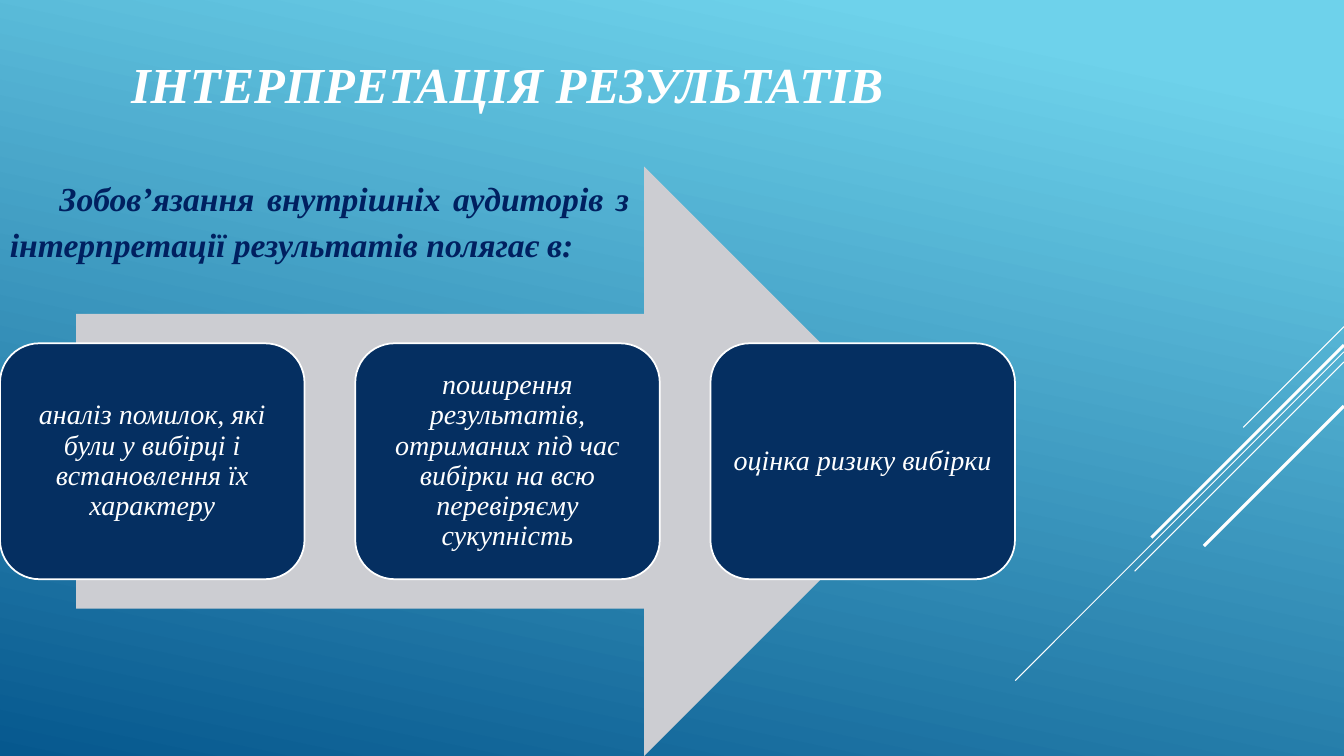
"""Build the slide on interpreting audit sampling results."""
from lxml import etree
from pptx import Presentation
from pptx.dml.color import RGBColor
from pptx.enum.shapes import MSO_CONNECTOR, MSO_SHAPE
from pptx.enum.text import MSO_ANCHOR, MSO_AUTO_SIZE, PP_ALIGN
from pptx.oxml.ns import qn
from pptx.util import Pt

STRAIGHT = MSO_CONNECTOR.STRAIGHT
ARROW, ROUNDED = MSO_SHAPE.RIGHT_ARROW, MSO_SHAPE.ROUNDED_RECTANGLE
MIDDLE, NO_FIT = MSO_ANCHOR.MIDDLE, MSO_AUTO_SIZE.NONE
CENTER, JUSTIFY = PP_ALIGN.CENTER, PP_ALIGN.JUSTIFY

TITLE = "ІНТЕРПРЕТАЦІЯ РЕЗУЛЬТАТІВ"
INTRO = "Зобов’язання внутрішніх аудиторів з інтерпретації результатів полягає в:"
STEPS = [
    "аналіз помилок, які були у вибірці і встановлення їх характеру",
    "поширення результатів, отриманих під час вибірки на всю перевіряєму сукупність",
    "оцінка ризику вибірки",
]
COLORS = {"sky": "6ED2EB", "deep": "06588E", "white": "FFFFFF",
          "arrow": "CCCDD2", "step": "052F61", "intro": "002060"}
FONT = "Times New Roman"
PAGE_WIDTH, PAGE_HEIGHT = 960, 540
FLOW_WIDTH, HEADER_HEIGHT = 725, 119
STEP_WIDTH, STEP_HEIGHT = 217.5, 168.5
STEP_GAP = (FLOW_WIDTH - len(STEPS) * STEP_WIDTH) / (len(STEPS) - 1)
ARROW_LEFT, ARROW_WIDTH = 54.4, 616.25
ARROW_HEIGHT = PAGE_HEIGHT - HEADER_HEIGHT
STEP_TOP = HEADER_HEIGHT + (ARROW_HEIGHT - STEP_HEIGHT) / 2
DIAGONALS = [(233.3, 72, 0.75), (251.3, 234.8, 0.75), (258.5, 149.5, 0.75),
             (246.5, 137.5, 2.25), (290, 100, 2.25)]


def color(name):
    return RGBColor.from_string(COLORS[name])


def write(box, text, size, tint, align, bold=False):
    frame = box.text_frame
    frame.word_wrap = True
    frame.auto_size = NO_FIT
    frame.text = text
    para = frame.paragraphs[0]
    para.alignment = align
    font = para.runs[0].font
    font.name, font.size = FONT, Pt(size)
    font.bold, font.italic = bold, True
    font.color.rgb = color(tint)
    return para


def add_block(page, kind, left, top, width, height, tint):
    block = page.shapes.add_shape(kind, Pt(left), Pt(top), Pt(width), Pt(height))
    block.shadow.inherit = False
    block.fill.solid()
    block.fill.fore_color.rgb = color(tint)
    block.line.fill.background()
    return block


def add_diagonal(page, top, run, weight):
    line = page.shapes.add_connector(
        STRAIGHT, Pt(PAGE_WIDTH), Pt(top), Pt(PAGE_WIDTH - run), Pt(top + run))
    line.line.color.rgb = color("white")
    line.line.width = Pt(weight)
    etree.SubElement(line._element.spPr, qn("a:effectLst"))


def add_step(page, index, text):
    left = index * (STEP_WIDTH + STEP_GAP)
    step = add_block(page, ROUNDED, left, STEP_TOP, STEP_WIDTH, STEP_HEIGHT, "step")
    step.line.color.rgb = color("white")
    step.line.width = Pt(1.25)
    frame = step.text_frame
    frame.margin_left = frame.margin_right = Pt(6)
    frame.margin_top = frame.margin_bottom = Pt(6)
    frame.vertical_anchor = MIDDLE
    write(step, text, 20, "white", CENTER).line_spacing = 0.9


deck = Presentation()
deck.slide_width, deck.slide_height = Pt(PAGE_WIDTH), Pt(PAGE_HEIGHT)
page = deck.slides.add_slide(deck.slide_layouts[5])

backdrop = page.background.fill
backdrop.gradient()
backdrop.gradient_angle = 258
for stop, name, position in zip(backdrop.gradient_stops, ("sky", "deep"), (0.1, 1)):
    stop.color.rgb = color(name)
    stop.position = position

for diagonal in DIAGONALS:
    add_diagonal(page, *diagonal)

title = page.shapes.title
title.left, title.top = Pt(0), Pt(0)
title.width, title.height = Pt(FLOW_WIDTH), Pt(HEADER_HEIGHT)
title.text_frame.vertical_anchor = MIDDLE
write(title, TITLE, 36, "white", CENTER, bold=True)

add_block(page, ARROW, ARROW_LEFT, HEADER_HEIGHT, ARROW_WIDTH, ARROW_HEIGHT, "arrow")
for index, text in enumerate(STEPS):
    add_step(page, index, text)

intro = page.shapes.add_textbox(Pt(0), Pt(HEADER_HEIGHT), Pt(456.5), Pt(72))
intro_para = write(intro, INTRO, 24, "intro", JUSTIFY, bold=True)
intro_para.line_spacing = 1.15
intro_para._p.get_or_add_pPr().set("indent", str(Pt(35.4)))

deck.save("out.pptx")
